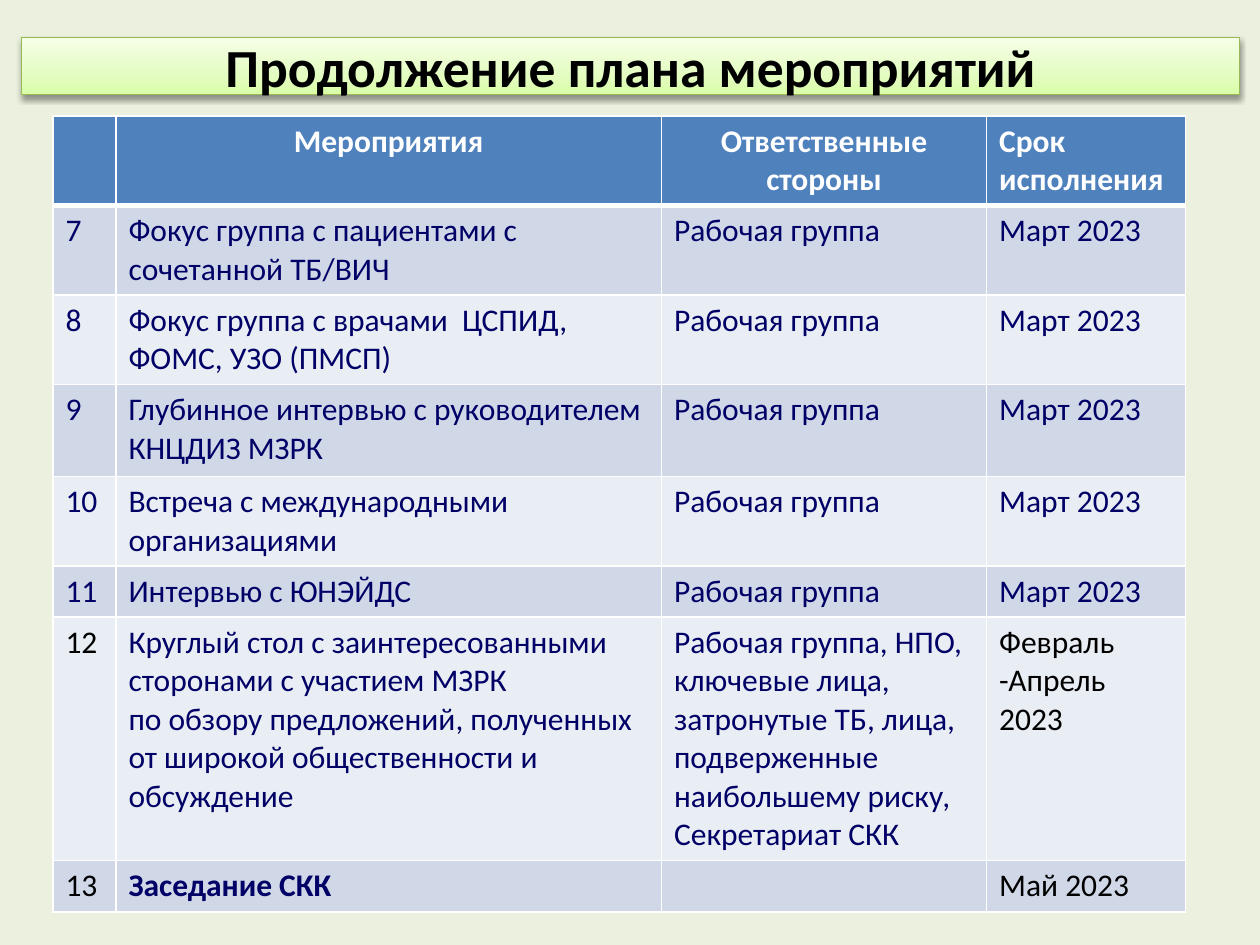
"""Build a slide with the continued plan of measures as a table."""
from dataclasses import dataclass

from pptx import Presentation
from pptx.dml.color import RGBColor
from pptx.enum.shapes import MSO_SHAPE
from pptx.enum.text import MSO_ANCHOR, PP_ALIGN
from pptx.oxml import parse_xml
from pptx.oxml.ns import nsdecls
from pptx.util import Inches, Pt


@dataclass(frozen=True)
class Theme:
    font: str = "Calibri"
    back: str = "EBF1DE"
    head: str = "4F81BD"
    bands: tuple = ("D0D8E8", "E9EDF4")
    white: str = "FFFFFF"
    black: str = "000000"
    navy: str = "000066"
    edge: str = "98B955"
    glow: tuple = ((0, "DAFDA7"), (35, "E4FCC2"), (100, "F5FFE7"))
    title: float = 30.6
    body: float = 18


THEME = Theme()
TITLE = "Продолжение плана мероприятий"
GROUP = "Рабочая группа"
MARCH = "Март 2023"
HEADS = ("", "Мероприятия", "Ответственные стороны", "Срок исполнения")
FIRST = 7
PLAN = (
    ("Фокус группа с пациентами с сочетанной ТБ/ВИЧ", GROUP, MARCH),
    ("Фокус группа с врачами  ЦСПИД, ФОМС, УЗО (ПМСП)", GROUP, MARCH),
    ("Глубинное интервью с руководителем КНЦДИЗ МЗРК", GROUP, MARCH),
    ("Встреча с международными организациями", GROUP, MARCH),
    ("Интервью с ЮНЭЙДС", GROUP, MARCH),
    ("Круглый стол с заинтересованными сторонами с участием МЗРК\n"
     "по обзору предложений, полученных от широкой общественности и обсуждение",
     "Рабочая группа, НПО, ключевые лица, затронутые ТБ, лица, "
     "подверженные наибольшему риску, Секретариат СКК",
     "Февраль -Апрель 2023"),
    ("Заседание СКК", "", "Май 2023"),
)
WIDTHS = (0.5, 4.33, 2.58, 1.58)
HEIGHTS = (0.7, 0.7, 0.71, 0.73, 0.71, 0.4, 1.93, 0.41)


def write(frame, text, size, color, bold=False, align=PP_ALIGN.LEFT):
    frame.text = text
    for para in frame.paragraphs:
        para.alignment = align
        for run in para.runs:
            run.font.name = THEME.font
            run.font.size = Pt(size)
            run.font.bold = bold
            run.font.color.rgb = RGBColor.from_string(color)


def shade(shape):
    stops = "".join(
        f'<a:gs pos="{place * 1000}"><a:srgbClr val="{color}"/></a:gs>'
        for place, color in THEME.glow)
    shape.fill.background()
    props = shape._element.spPr
    blank = props.find("{*}noFill")
    props.replace(blank, parse_xml(
        f'<a:gradFill {nsdecls("a")} rotWithShape="1"><a:gsLst>{stops}</a:gsLst>'
        '<a:lin ang="16200000" scaled="0"/></a:gradFill>'))
    shape.shadow.inherit = False
    props.find("{*}effectLst").append(parse_xml(
        f'<a:outerShdw {nsdecls("a")} blurRad="{Pt(3.1)}" dist="{Pt(1.6)}" '
        f'dir="5400000" rotWithShape="0"><a:srgbClr val="{THEME.black}">'
        '<a:alpha val="38000"/></a:srgbClr></a:outerShdw>'))


def add_title(slide):
    bar = slide.shapes.add_shape(
        MSO_SHAPE.RECTANGLE, Inches(0.17), Inches(0.3), Inches(9.67), Inches(0.45))
    bar.line.color.rgb = RGBColor.from_string(THEME.edge)
    bar.line.width = Pt(0.75)
    shade(bar)
    bar.text_frame.word_wrap = True
    bar.text_frame.vertical_anchor = MSO_ANCHOR.MIDDLE
    write(bar.text_frame, TITLE, THEME.title, THEME.black, True, PP_ALIGN.CENTER)


def rule(cell, row):
    props = cell._tc.get_or_add_tcPr()
    widths = {"L": 1, "R": 1, "T": 3 if row == 1 else 1, "B": 3 if row == 0 else 1}
    for side, width in widths.items():
        props.append(parse_xml(
            f'<a:ln{side} {nsdecls("a")} w="{Pt(width)}"><a:solidFill>'
            f'<a:srgbClr val="{THEME.white}"/></a:solidFill></a:ln{side}>'))


def style(row, col):
    if row == 0:
        align = PP_ALIGN.LEFT if col == 3 else PP_ALIGN.CENTER
        return THEME.head, THEME.white, True, align
    late = row > 5 and col in (0, 3)
    bold = row == len(PLAN) and col == 1
    color = THEME.black if late else THEME.navy
    return THEME.bands[(row - 1) % 2], color, bold, PP_ALIGN.LEFT


def add_plan(slide):
    rows = [HEADS] + [(str(num), *item) for num, item in enumerate(PLAN, FIRST)]
    table = slide.shapes.add_table(
        len(rows), len(WIDTHS), Inches(0.42), Inches(0.92),
        Inches(sum(WIDTHS)), Inches(sum(HEIGHTS))).table
    for col, width in zip(table.columns, WIDTHS):
        col.width = Inches(width)
    for line, height in zip(table.rows, HEIGHTS):
        line.height = Inches(height)
    for row, texts in enumerate(rows):
        for col, text in enumerate(texts):
            cell = table.cell(row, col)
            fill, color, bold, align = style(row, col)
            rule(cell, row)
            cell.fill.solid()
            cell.fill.fore_color.rgb = RGBColor.from_string(fill)
            write(cell.text_frame, text, THEME.body, color, bold, align)


def main():
    deck = Presentation()
    deck.slide_width, deck.slide_height = Inches(10), Inches(7.5)
    slide = deck.slides.add_slide(deck.slide_layouts[6])
    slide.background.fill.solid()
    slide.background.fill.fore_color.rgb = RGBColor.from_string(THEME.back)
    add_title(slide)
    add_plan(slide)
    deck.save("out.pptx")


if __name__ == "__main__":
    main()
